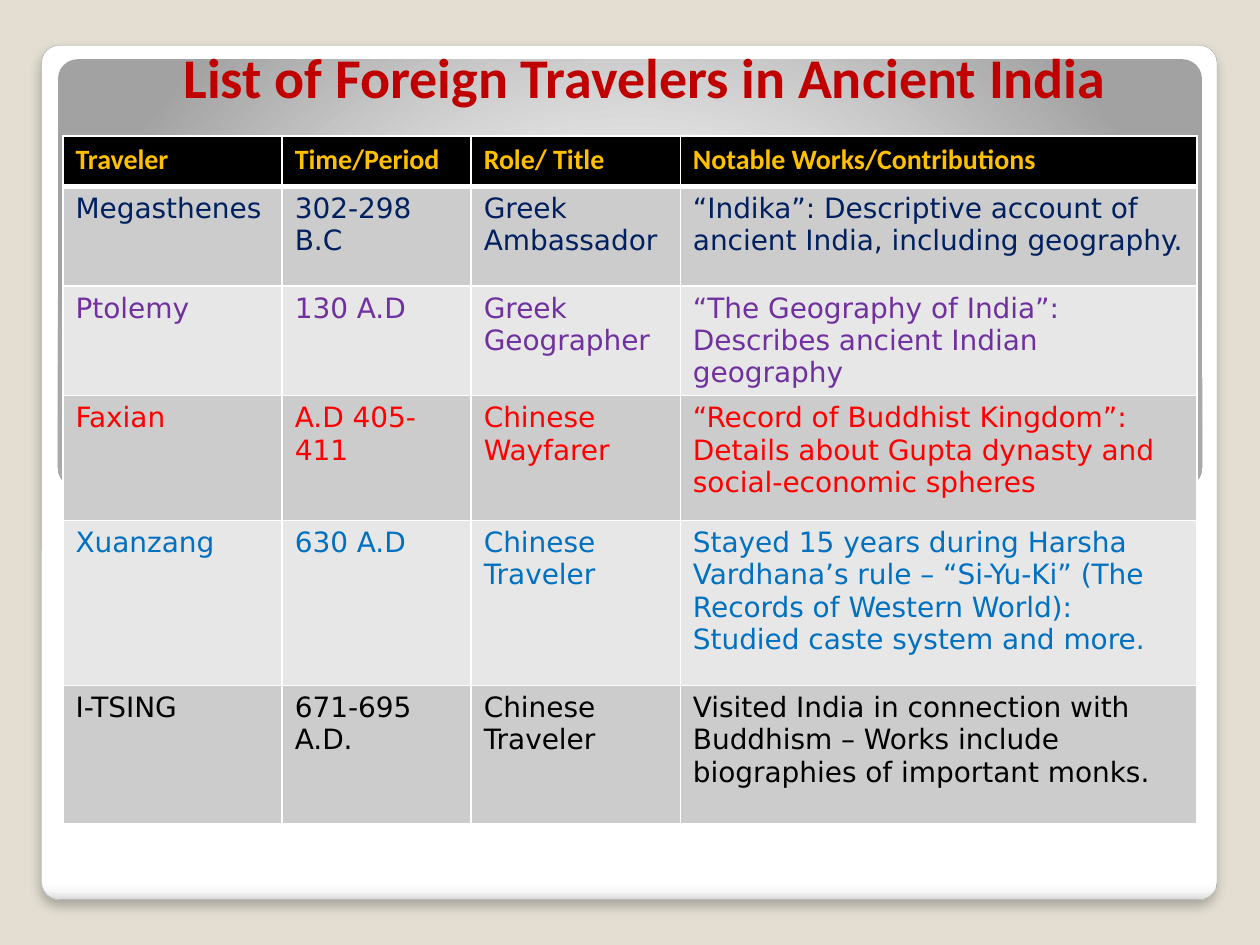
from pptx import Presentation
from pptx.dml.color import RGBColor
from pptx.enum.shapes import MSO_SHAPE as Preset
from pptx.enum.text import MSO_ANCHOR as Anchor, MSO_AUTO_SIZE as AutoSize, PP_ALIGN as Align
from pptx.oxml import parse_xml
from pptx.oxml.ns import nsdecls, qn
from pptx.util import Inches, Pt

BACKGROUND = RGBColor(0xE3, 0xDE, 0xD1)
CARD_LINE = RGBColor(0xA4, 0xA4, 0xA4)
WHITE = RGBColor(0xFF, 0xFF, 0xFF)
BLACK = RGBColor(0, 0, 0)
TITLE_RED = RGBColor(0xC0, 0, 0)
GOLD = RGBColor(0xFF, 0xC0, 0)
NAVY = RGBColor(0, 0x20, 0x60)
PURPLE = RGBColor(0x70, 0x30, 0xA0)
RED = RGBColor(0xFF, 0, 0)
BLUE = RGBColor(0, 0x70, 0xC0)
BANDS = (RGBColor(0xE7, 0xE7, 0xE7), RGBColor(0xCC, 0xCC, 0xCC))

HEADING_FONT = "Calibri"
BODY_FONT = "DejaVu Sans"
CARD_STOPS = ((0, "FFFFFF"), (98, "FFFFFF"), (99, "F7F7F7"), (100, "DADADA"))
CARD_DIRECTION = '<a:lin ang="5400000" scaled="0"/>'
GLOW_STOPS = ((0, "FFFFFF"), (55, "E1E1E1"), (100, "A2A2A2"))
GLOW_DIRECTION = ('<a:path path="circle"><a:fillToRect l="50000" t="175000" '
                  'r="50000" b="-75000"/></a:path>')

COLUMN_WIDTHS = (1.74, 1.5, 1.66, 4.1)
ROW_HEIGHTS = (0.4, 0.79, 0.74, 0.99, 1.31, 1.1)
ROWS = (
    (GOLD, ("Traveler", "Time/Period", "Role/ Title", "Notable Works/Contributions")),
    (NAVY, ("Megasthenes", "302-298 B.C", "Greek Ambassador",
            "“Indika”: Descriptive account of ancient India, including geography.")),
    (PURPLE, ("Ptolemy", "130 A.D", "Greek Geographer",
              "“The Geography of India”: Describes ancient Indian geography")),
    (RED, ("Faxian", "A.D 405-411", "Chinese Wayfarer",
           "“Record of Buddhist Kingdom”: Details about Gupta dynasty and "
           "social-economic spheres")),
    (BLUE, ("Xuanzang", "630 A.D", "Chinese Traveler",
            "Stayed 15 years during Harsha Vardhana’s rule – “Si-Yu-Ki” "
            "(The Records of Western World): Studied caste system and more.")),
    (BLACK, ("I-TSING", "671-695 A.D.", "Chinese Traveler",
             "Visited India in connection with Buddhism – Works include "
             "biographies of important monks.")),
)


def add_run(paragraph, text, font_name, size, color, bold):
    """Add one formatted run to a paragraph."""
    run = paragraph.add_run()
    run.text = text
    run.font.name = font_name
    run.font.size = Pt(size)
    run.font.color.rgb = color
    run.font.bold = bold


def add_panel(slide, box, corner, stops, direction):
    """Add a rounded panel with a gradient fill and no outline."""
    panel = slide.shapes.add_shape(Preset.ROUNDED_RECTANGLE, *map(Inches, box))
    panel.adjustments[0] = corner
    panel.shadow.inherit = False
    panel.line.fill.background()
    panel.fill.gradient()
    stop_xml = "".join(f'<a:gs pos="{position * 1000}"><a:srgbClr val="{color}"/></a:gs>'
                       for position, color in stops)
    gradient = parse_xml(f'<a:gradFill {nsdecls("a")} rotWithShape="1">'
                         f'<a:gsLst>{stop_xml}</a:gsLst>{direction}</a:gradFill>')
    properties = panel._element.spPr
    properties.replace(properties.find(qn("a:gradFill")), gradient)
    return panel


def add_backdrop(slide, box):
    """Place the white card and the grey glow inside the given box."""
    left, top, width, height = box
    card = add_panel(slide, box, 0.021, CARD_STOPS, CARD_DIRECTION)
    card.line.color.rgb = CARD_LINE
    card.line.width = Pt(0.16)
    card._element.spPr.find(qn("a:effectLst")).append(parse_xml(
        f'<a:outerShdw {nsdecls("a")} blurRad="{Pt(6)}" dist="{Pt(4)}" dir="5400000" '
        'algn="t" rotWithShape="0"><a:srgbClr val="000000"><a:alpha val="25000"/>'
        '</a:srgbClr></a:outerShdw>'))
    glow_box = (left + 0.13, top + 0.11, width - 0.25, height / 2 + 0.01)
    add_panel(slide, glow_box, 0.046, GLOW_STOPS, GLOW_DIRECTION)


def place_title(slide, box, text):
    """Move the title placeholder into the box, in front of the backdrop."""
    title = slide.shapes.title
    slide.shapes._spTree.append(title._element)
    title.left, title.top, title.width, title.height = map(Inches, box)
    frame = title.text_frame
    frame.auto_size = AutoSize.NONE
    frame.word_wrap = True
    frame.vertical_anchor = Anchor.BOTTOM
    frame.margin_left = frame.margin_right = Inches(0.05)
    frame.margin_top = frame.margin_bottom = Inches(0.05)
    paragraph = frame.paragraphs[0]
    paragraph.alignment = Align.CENTER
    add_run(paragraph, text, HEADING_FONT, 32, TITLE_RED, True)


def set_borders(cell, top, bottom):
    """Draw white cell borders with the given top and bottom widths."""
    properties = cell._tc.get_or_add_tcPr()
    for side, width in (("L", 1), ("R", 1), ("T", top), ("B", bottom)):
        properties.append(parse_xml(
            f'<a:ln{side} {nsdecls("a")} w="{Pt(width)}"><a:solidFill>'
            f'<a:srgbClr val="{WHITE}"/></a:solidFill></a:ln{side}>'))


def add_traveler_table(slide, box):
    """Add the table of travelers in the given box."""
    table = slide.shapes.add_table(len(ROWS), len(COLUMN_WIDTHS), *map(Inches, box)).table
    for column, width in zip(table.columns, COLUMN_WIDTHS):
        column.width = Inches(width)
    for index, (color, texts) in enumerate(ROWS):
        is_header = index == 0
        table.rows[index].height = Inches(ROW_HEIGHTS[index])
        for cell, text in zip(table.rows[index].cells, texts):
            set_borders(cell, 3 if index == 1 else 1, 3 if is_header else 1)
            cell.fill.solid()
            cell.fill.fore_color.rgb = BLACK if is_header else BANDS[index % 2]
            add_run(cell.text_frame.paragraphs[0], text,
                    HEADING_FONT if is_header else BODY_FONT, 16, color, is_header)


def main():
    """Build the slide and save it."""
    presentation = Presentation()
    presentation.slide_width = Inches(10)
    presentation.slide_height = Inches(7.5)
    slide = presentation.slides.add_slide(presentation.slide_layouts[5])
    slide.background.fill.solid()
    slide.background.fill.fore_color.rgb = BACKGROUND
    add_backdrop(slide, (0.33, 0.36, 9.33, 6.78))
    place_title(slide, (0.58, 0.25, 9.08, 0.67), "List of Foreign Travelers in Ancient India")
    add_traveler_table(slide, (0.5, 1.08, sum(COLUMN_WIDTHS), sum(ROW_HEIGHTS)))
    presentation.save("out.pptx")


if __name__ == "__main__":
    main()
